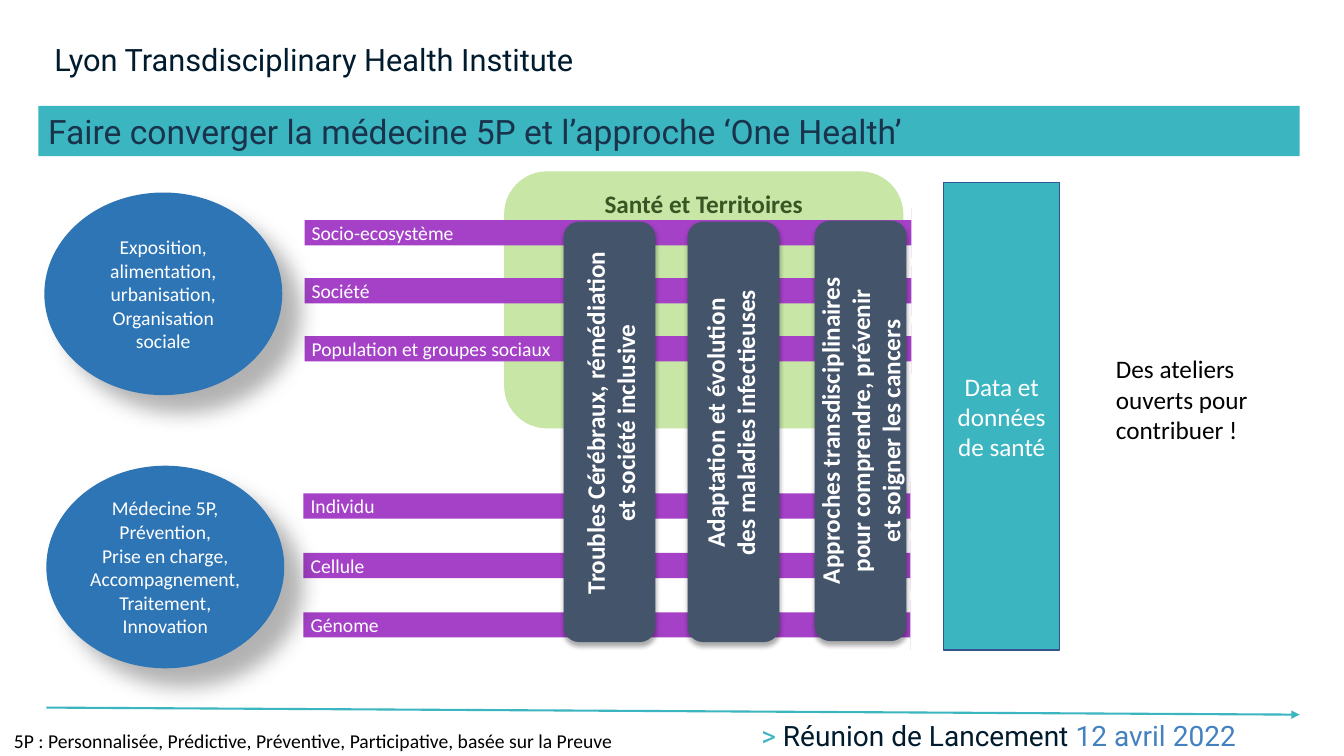
from dataclasses import dataclass

from lxml import etree
from pptx import Presentation
from pptx.dml.color import RGBColor
from pptx.enum.shapes import MSO_CONNECTOR, MSO_SHAPE
from pptx.enum.text import MSO_ANCHOR as Anchor, MSO_AUTO_SIZE as AutoSize, PP_ALIGN as Align
from pptx.oxml.ns import qn
from pptx.shapes.autoshape import Shape
from pptx.shapes.shapetree import SlideShapes
from pptx.util import Inches, Pt

BLACK = RGBColor(0x00, 0x00, 0x00)
WHITE = RGBColor(0xFF, 0xFF, 0xFF)
TEAL = RGBColor(0x3B, 0xB5, 0xC0)
NAVY = RGBColor(0x00, 0x1B, 0x2E)
BANNER_TEXT = RGBColor(0x1A, 0x33, 0x4C)
DATE_BLUE = RGBColor(0x43, 0x81, 0xC1)
GREEN = RGBColor(0x92, 0xD0, 0x50)
DARK_GREEN = RGBColor(0x38, 0x56, 0x23)
PURPLE = RGBColor(0xA4, 0x41, 0xC7)
SLATE = RGBColor(0x44, 0x54, 0x6A)
BLUE = RGBColor(0x2E, 0x75, 0xB5)
DATA_BORDER = RGBColor(0x32, 0x54, 0x91)

TIGHT = (0.07, 0.04)
NORMAL = (0.1, 0.05)


@dataclass(frozen=True)
class Shadow:
    opacity: int
    blur: float
    distance: float
    angle: int


@dataclass(frozen=True)
class Scale:
    left: float
    top: float
    step: float
    labels: tuple[str, ...]


@dataclass(frozen=True)
class Theme:
    left: float
    top: float
    text_left: float
    text_top: float
    text: str


@dataclass(frozen=True)
class Domain:
    left: float
    top: float
    text: str


PILLAR_SHADOW = Shadow(32, 3.5, 2.2, 90)
DOMAIN_SHADOW = Shadow(30, 15, 18, 45)

SCALES = (
    Scale(3.02, 2.06, 0.575, ("Socio-ecosystème", "Société", "Population et groupes sociaux")),
    Scale(3.01, 4.77, 0.59, ("Individu", "Cellule", "Génome")),
)
THEMES = (
    Theme(5.59, 2.2, 3.99, 3.96, "Troubles Cérébraux, rémédiation\net société inclusive"),
    Theme(6.82, 2.2, 5.18, 3.96, "Adaptation et évolution\ndes maladies infectieuses"),
    Theme(8.08, 2.19, 6.47, 4.04,
          "Approches transdisciplinaires\npour comprendre, prévenir\net soigner les cancers"),
)
DOMAINS = (
    Domain(0.44, 1.91, "Exposition, alimentation,\nurbanisation,\nOrganisation sociale"),
    Domain(0.46, 4.62, "Médecine 5P,\nPrévention,\nPrise en charge,\n"
                       "Accompagnement,\nTraitement,\nInnovation"),
)


def write_text(shape: Shape, text: str, *, size: float, color: RGBColor, font: str = "Calibri",
               bold: bool = False, align: Align = Align.LEFT, anchor: Anchor = Anchor.TOP,
               insets: tuple[float, float] = NORMAL, grow: bool = False, wrap: bool = True,
               line_spacing: float = 1.0,
               more_runs: tuple[tuple[str, RGBColor], ...] = ()) -> None:
    frame = shape.text_frame
    frame.word_wrap = wrap
    frame.auto_size = AutoSize.SHAPE_TO_FIT_TEXT if grow else AutoSize.NONE
    frame.vertical_anchor = anchor
    frame.margin_left = frame.margin_right = Inches(insets[0])
    frame.margin_top = frame.margin_bottom = Inches(insets[1])
    for index, line in enumerate(text.split("\n")):
        paragraph = frame.add_paragraph() if index else frame.paragraphs[0]
        paragraph.alignment = align
        paragraph.line_spacing = line_spacing
        for run_text, run_color in ((line, color), *more_runs):
            run = paragraph.add_run()
            run.text = run_text
            run.font.name = font
            run.font.size = Pt(size)
            run.font.bold = bold
            run.font.color.rgb = run_color


def add_shadow(shape: Shape, shadow: Shadow) -> None:
    effects = shape._element.spPr.find(qn("a:effectLst"))
    outer = etree.SubElement(effects, qn("a:outerShdw"), blurRad=str(Pt(shadow.blur)),
                             dist=str(Pt(shadow.distance)), dir=str(shadow.angle * 60000),
                             algn="ctr", rotWithShape="0")
    color = etree.SubElement(outer, qn("a:srgbClr"), val=str(BLACK))
    etree.SubElement(color, qn("a:alpha"), val=str(shadow.opacity * 1000))


def add_block(shapes: SlideShapes, kind: MSO_SHAPE, left: float, top: float, width: float,
              height: float, fill: RGBColor, shadow: Shadow | None = None) -> Shape:
    shape = shapes.add_shape(kind, Inches(left), Inches(top), Inches(width), Inches(height))
    shape.shadow.inherit = False
    shape.fill.solid()
    shape.fill.fore_color.rgb = fill
    shape.line.fill.background()
    if shadow:
        add_shadow(shape, shadow)
    return shape


def add_text_box(shapes: SlideShapes, left: float, top: float, width: float,
                 height: float) -> Shape:
    return shapes.add_textbox(Inches(left), Inches(top), Inches(width), Inches(height))


def add_scale(shapes: SlideShapes, scale: Scale) -> None:
    for index, label in enumerate(scale.labels):
        bar = add_block(shapes, MSO_SHAPE.RIGHT_ARROW, scale.left,
                        scale.top + index * scale.step, 6.02, 0.5, PURPLE)
        bar.adjustments[1] = 0
        write_text(bar, label, size=14, color=WHITE, anchor=Anchor.MIDDLE, insets=TIGHT)


def add_theme(shapes: SlideShapes, theme: Theme) -> None:
    add_block(shapes, MSO_SHAPE.ROUNDED_RECTANGLE, theme.left, theme.top, 0.91, 4.17,
              SLATE, PILLAR_SHADOW)
    label = add_text_box(shapes, theme.text_left, theme.text_top, 4.12, 0.47)
    label.rotation = 270
    write_text(label, theme.text, size=18, color=WHITE, bold=True, align=Align.CENTER,
               anchor=Anchor.MIDDLE, insets=TIGHT)


def add_domain(shapes: SlideShapes, domain: Domain) -> None:
    ellipse = add_block(shapes, MSO_SHAPE.OVAL, domain.left, domain.top, 2.36, 2.01,
                        BLUE, DOMAIN_SHADOW)
    write_text(ellipse, domain.text, size=14, color=WHITE, align=Align.CENTER,
               anchor=Anchor.MIDDLE, insets=TIGHT)


def add_footer_arrow(shapes: SlideShapes) -> None:
    arrow = shapes.add_connector(MSO_CONNECTOR.STRAIGHT, Inches(0.46), Inches(7.02),
                                 Inches(12.89), Inches(7.09))
    arrow.line.color.rgb = TEAL
    arrow.line.width = Pt(1.5)
    etree.SubElement(arrow.line._get_or_add_ln(), qn("a:tailEnd"), type="triangle")
    etree.SubElement(arrow._element.spPr, qn("a:effectLst"))


def main() -> None:
    presentation = Presentation()
    presentation.slide_width = Inches(13.33)
    presentation.slide_height = Inches(7.5)
    slide = presentation.slides.add_slide(presentation.slide_layouts[6])
    shapes = slide.shapes

    institute = add_text_box(shapes, 0.44, 0.36, 7.07, 0.47)
    write_text(institute, "Lyon Transdisciplinary Health Institute", size=22, color=NAVY,
               font="Roboto", grow=True)
    banner = add_block(shapes, MSO_SHAPE.RECTANGLE, 0.38, 1.05, 12.51, 0.5, TEAL)
    write_text(banner, "Faire converger la médecine 5P et l’approche ‘One Health’", size=24,
               color=BANNER_TEXT, font="Roboto", grow=True)

    territory = add_block(shapes, MSO_SHAPE.ROUNDED_RECTANGLE, 5, 1.7, 3.96, 2.55, GREEN)
    green = territory.fill._xPr.find(qn("a:solidFill")).find(qn("a:srgbClr"))
    etree.SubElement(green, qn("a:alpha"), val="50000")
    write_text(territory, "Santé et Territoires", size=18, color=DARK_GREEN, bold=True,
               align=Align.CENTER, insets=TIGHT)

    for scale in SCALES:
        add_scale(shapes, scale)
    for domain in DOMAINS:
        add_domain(shapes, domain)
    for theme in THEMES:
        add_theme(shapes, theme)

    data = add_block(shapes, MSO_SHAPE.RECTANGLE, 9.36, 1.81, 1.15, 4.64, TEAL)
    data.line.color.rgb = DATA_BORDER
    data.line.width = Pt(1)
    write_text(data, "Data et données de santé", size=18, color=WHITE, align=Align.CENTER,
               anchor=Anchor.MIDDLE)
    workshops = add_text_box(shapes, 10.97, 3.46, 2.16, 1.01)
    write_text(workshops, "Des ateliers ouverts pour contribuer !", size=18, color=BLACK,
               grow=True)

    add_footer_arrow(shapes)
    meeting = add_text_box(shapes, 6.92, 6.95, 5.97, 0.74)
    write_text(meeting, ">", size=20, color=TEAL, font="Roboto", align=Align.CENTER,
               anchor=Anchor.MIDDLE, line_spacing=0.9,
               more_runs=((" Réunion de Lancement ", NAVY), ("12 avril 2022", DATE_BLUE)))
    footnote = add_text_box(shapes, 0.04, 7.18, 6.23, 0.34)
    write_text(footnote, "5P : Personnalisée, Prédictive, Préventive, Participative, "
                         "basée sur la Preuve", size=14, color=BLACK, grow=True, wrap=False)

    presentation.save("out.pptx")


if __name__ == "__main__":
    main()
